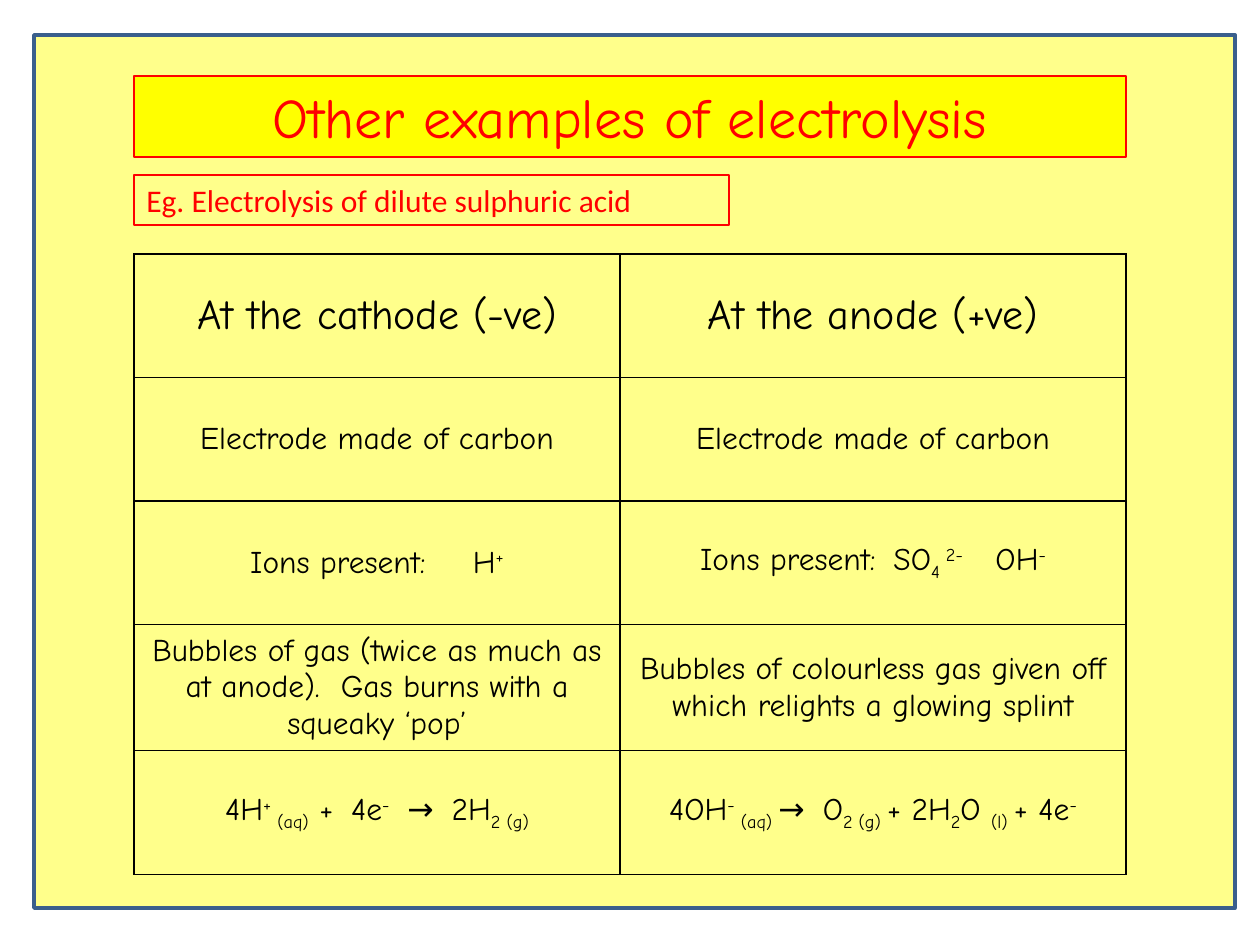
import dataclasses

import pptx
import pptx.dml.color
import pptx.enum.shapes
import pptx.enum.text
import pptx.oxml.ns
import pptx.util
from lxml import etree

EMU_PER_PX = 914400 / 126
ALIGN = pptx.enum.text.PP_ALIGN
ANCHOR = pptx.enum.text.MSO_ANCHOR


def rgb(value):
    return pptx.dml.color.RGBColor.from_string(value)


@dataclasses.dataclass(frozen=True)
class Theme:
    panel: str = "FFFF8B"
    panel_edge: str = "3A5F8C"
    banner: str = "FFFF00"
    accent: str = "FF0000"
    ink: str = "000000"
    display_font: str = "Comic Neue"
    body_font: str = "Calibri"
    title_size: int = 32
    heading_size: int = 24
    body_size: int = 18


THEME = Theme()
SUP, SUB = 30, -25  # baseline shifts in percent
SPACE = 4.2  # width of one body space in points


@dataclasses.dataclass(frozen=True)
class Gap:
    """A single space widened to the width of several."""
    spaces: int


# Each cell is a list of runs: plain text, (text, baseline) or Gap
ROWS = [
    [["At the cathode (-ve)"], ["At the anode (+ve)"]],
    [["Electrode made of carbon"], ["Electrode made of carbon"]],
    [["Ions present:", Gap(6), "H", ("+", SUP)],
     ["Ions present:", Gap(2), "SO", ("4 ", SUB), ("2-", SUP), Gap(4),
      "OH", ("-", SUP)]],
    [["Bubbles of gas (twice as much as at anode).  Gas burns with a "
      "squeaky ‘pop’"],
     ["Bubbles of colourless gas given off which relights a glowing splint"]],
    [["4H", ("+ ", SUP), ("(aq)", SUB), Gap(1), "+", Gap(2), "4e", ("-", SUP),
      Gap(2), "→", Gap(2), "2H", ("2 (g)", SUB)],
     ["4OH", ("- ", SUP), ("(aq) ", SUB), "→", Gap(2), "O", ("2 (g) ", SUB),
      "+ 2H", ("2", SUB), "O ", ("(l) ", SUB), "+ 4e", ("-", SUP)]],
]


def px(length):
    return pptx.util.Emu(round(length * EMU_PER_PX))


def add_runs(paragraph, parts, font, size, color):
    for part in parts:
        run = paragraph.add_run()
        properties = run.font._element
        if isinstance(part, Gap):
            run.text = " "
            properties.set("spc", str(round((part.spaces - 1) * SPACE * 100)))
        elif isinstance(part, tuple):
            run.text, shift = part
            properties.set("baseline", str(shift * 1000))
        else:
            run.text = part
        run.font.name = font
        run.font.size = pptx.util.Pt(size)
        run.font.color.rgb = rgb(color)


def add_box(slide, box, fill, edge, edge_width):
    shape = slide.shapes.add_shape(
        pptx.enum.shapes.MSO_SHAPE.RECTANGLE, *map(px, box))
    shape.shadow.inherit = False
    if fill:
        shape.fill.solid()
        shape.fill.fore_color.rgb = rgb(fill)
    else:
        shape.fill.background()
    shape.line.color.rgb = rgb(edge)
    shape.line.width = pptx.util.Pt(edge_width)
    return shape


def add_caption(slide, box, text, fill, font, size, align):
    caption = add_box(slide, box, fill, THEME.accent, 0.75)
    frame = caption.text_frame
    frame.word_wrap = True
    frame.auto_size = pptx.enum.text.MSO_AUTO_SIZE.SHAPE_TO_FIT_TEXT
    frame.vertical_anchor = ANCHOR.TOP
    paragraph = frame.paragraphs[0]
    paragraph.alignment = align
    add_runs(paragraph, [text], font, size, THEME.accent)


def add_heading(slide, box):
    left, top, width, _ = box
    add_caption(slide, (left, top, width, 81), "Other examples of electrolysis",
                THEME.banner, THEME.display_font, THEME.title_size, ALIGN.CENTER)
    add_caption(slide, (left, top + 99, 595, 50),
                "Eg. Electrolysis of dilute sulphuric acid",
                None, THEME.body_font, THEME.body_size, ALIGN.LEFT)


def set_borders(cell, color, width):
    properties = cell._tc.get_or_add_tcPr()
    for side in ("a:lnL", "a:lnR", "a:lnT", "a:lnB"):
        line = etree.SubElement(properties, pptx.oxml.ns.qn(side),
                                w=str(pptx.util.Pt(width)))
        fill = etree.SubElement(line, pptx.oxml.ns.qn("a:solidFill"))
        etree.SubElement(fill, pptx.oxml.ns.qn("a:srgbClr"), val=color)


def add_electrode_table(slide, box):
    left, top, width, height = box
    table = slide.shapes.add_table(
        len(ROWS), len(ROWS[0]), *map(px, box)).table
    table.first_row = False
    table.horz_banding = False
    cathode_width = 486
    table.columns[0].width = px(cathode_width)
    table.columns[1].width = px(width - cathode_width)
    for r, row in enumerate(ROWS):
        table.rows[r].height = px(height / len(ROWS))
        size = THEME.body_size if r else THEME.heading_size
        for c, parts in enumerate(row):
            cell = table.cell(r, c)
            set_borders(cell, THEME.ink, 1)
            cell.fill.background()
            cell.vertical_anchor = ANCHOR.MIDDLE
            paragraph = cell.text_frame.paragraphs[0]
            paragraph.alignment = ALIGN.CENTER
            add_runs(paragraph, parts, THEME.display_font, size, THEME.ink)


def main():
    deck = pptx.Presentation()
    deck.slide_width, deck.slide_height = px(1260), px(945)
    slide = deck.slides.add_slide(deck.slide_layouts[6])

    # Background panel
    add_box(slide, (34, 35, 1201, 873), THEME.panel, THEME.panel_edge, 2)
    # Title and example
    add_heading(slide, (134, 76, 992, 149))
    # Cathode and anode compared
    add_electrode_table(slide, (134, 254, 992, 618))

    deck.save("out.pptx")


if __name__ == "__main__":
    main()
